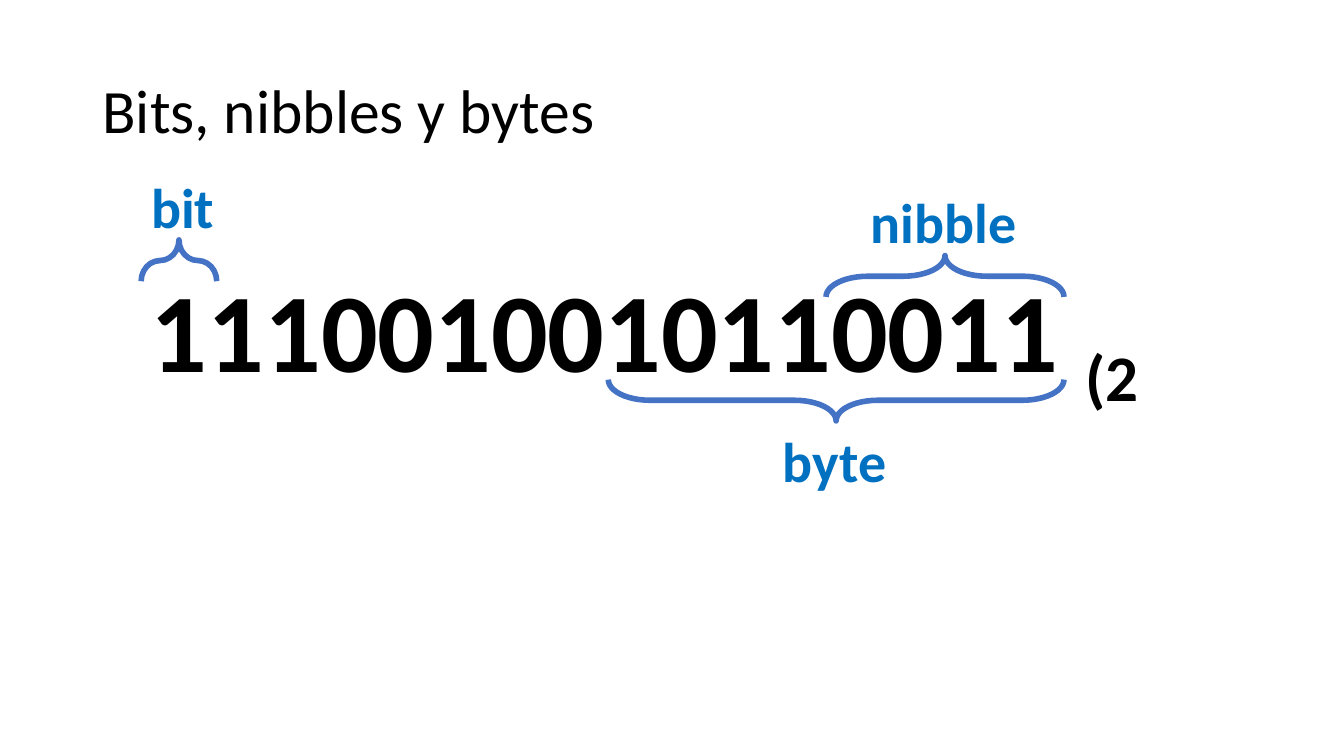
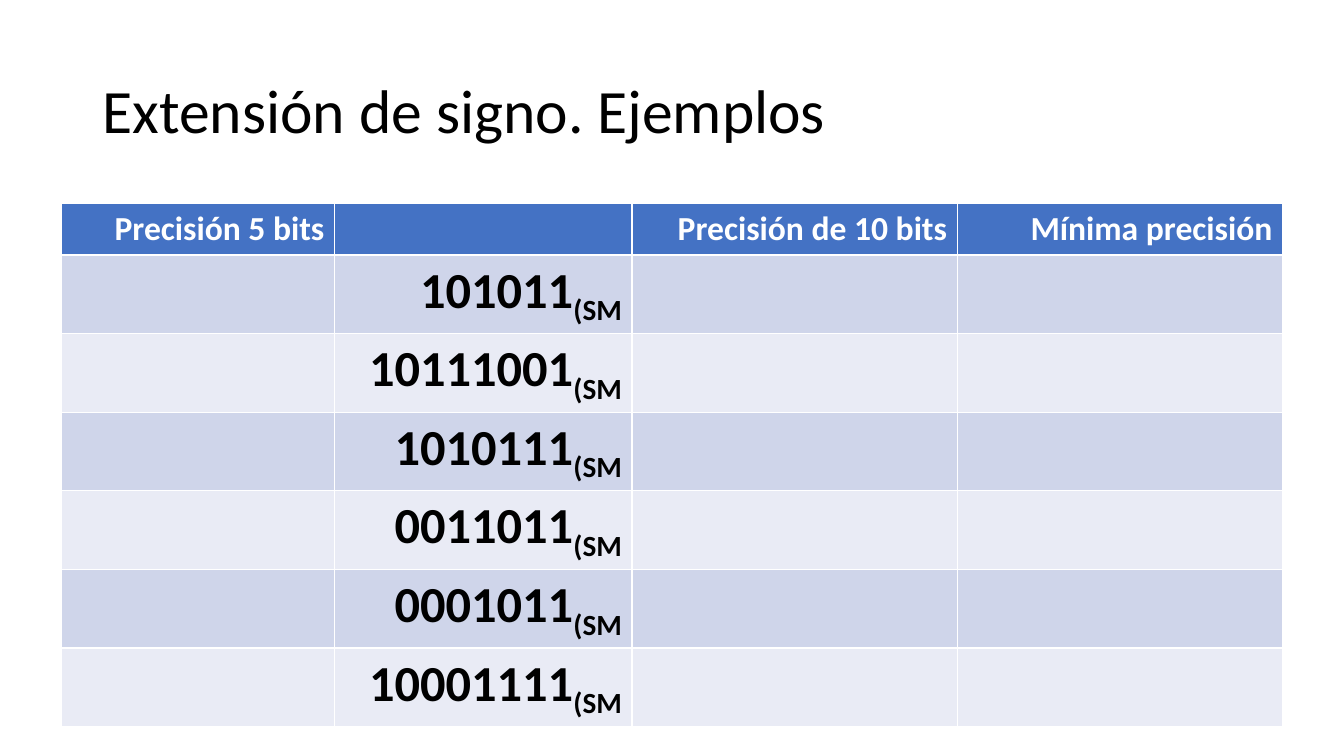
import pptx
import pptx.dml.color
import pptx.enum.shapes
import pptx.enum.text
import pptx.util

Pt = pptx.util.Pt
ALIGN = pptx.enum.text.PP_ALIGN
FIT = pptx.enum.text.MSO_AUTO_SIZE

COLORS = {
    "text": "000000",
    "white": "FFFFFF",
    "label": "0070C0",
    "accent": "4472C4",
    "dark_band": "CFD5EA",
    "light_band": "E9EBF5",
}


def rgb(name):
    return pptx.dml.color.RGBColor.from_string(COLORS[name])


def write(text_frame, text, size=40, color="text", bold=True, align=ALIGN.LEFT, subscript=""):
    paragraph = text_frame.paragraphs[0]
    paragraph.alignment = align
    for content in filter(None, (text, subscript)):
        run = paragraph.add_run()
        run.text = content
        run.font.name = "Calibri"
        run.font.size = Pt(size)
        run.font.bold = bold
        run.font.color.rgb = rgb(color)
    if subscript:
        run.font._element.set("baseline", "-25000")
    return paragraph


presentation = pptx.Presentation()
presentation.slide_width = Pt(960)
presentation.slide_height = Pt(540)

slides = []
for heading in ("Bits, nibbles y bytes", "Extensión de signo. Ejemplos"):
    slide = presentation.slides.add_slide(presentation.slide_layouts[5])
    title = slide.shapes.title
    title.left, title.top, title.width, title.height = Pt(66), Pt(28.75), Pt(828), Pt(104.4)
    title.text_frame.auto_size = FIT.NONE
    title.text_frame.vertical_anchor = pptx.enum.text.MSO_ANCHOR.MIDDLE
    write(title.text_frame, heading, size=44, bold=False).line_spacing = 0.9
    slides.append(slide)
units_slide, table_slide = slides

text_boxes = [
    ("1110010010110011 ", "(2", 80, "text", False, (100.8, 182.9, 731.5, 104.4)),
    ("nibble", "", 40, "label", False, (614.9, 130.3, 120.2, 55.4)),
    ("bit", "", 40, "label", True, (100.8, 119.5, 195.8, 55.4)),
    ("byte", "", 40, "label", False, (552.2, 301, 89.3, 55.4)),
]
for text, subscript, size, color, wrap, box in text_boxes:
    text_frame = units_slide.shapes.add_textbox(*map(Pt, box)).text_frame
    text_frame.word_wrap = wrap
    text_frame.auto_size = FIT.SHAPE_TO_FIT_TEXT
    write(text_frame, text, size=size, color=color, subscript=subscript)

brace_depth = 29.5
for start, end, middle, rotation in (
    (590, 760, 197.3, 90),
    (100.8, 154.8, 186.1, 90),
    (434.5, 760, 285.9, 270),
):
    length = end - start
    brace = units_slide.shapes.add_shape(
        pptx.enum.shapes.MSO_SHAPE.LEFT_BRACE,
        Pt((start + end - brace_depth) / 2),
        Pt(middle - length / 2),
        Pt(brace_depth),
        Pt(length),
    )
    brace.rotation = rotation
    brace.adjustments[0] = 1.01
    brace.shadow.inherit = False
    brace.fill.background()
    brace.line.color.rgb = rgb("accent")
    brace.line.width = Pt(4)

headers = ["Precisión 5 bits", "", "Precisión de 10 bits", "Mínima precisión"]
numbers = ["101011", "10111001", "1010111", "0011011", "0001011", "10001111"]
column_widths = [195, 212.4, 232.4, 232.4]
table = table_slide.shapes.add_table(
    len(numbers) + 1, len(headers), Pt(44), Pt(145.6), Pt(sum(column_widths)), Pt(372.5)
).table
for column, width in zip(table.columns, column_widths):
    column.width = Pt(width)
for row_index, row in enumerate(table.rows):
    row.height = Pt(56 if row_index else 36.5)
    band = ("light_band", "dark_band")[row_index % 2] if row_index else "accent"
    for cell in row.cells:
        cell.fill.solid()
        cell.fill.fore_color.rgb = rgb(band)
for cell, header in zip(table.rows[0].cells, headers):
    write(cell.text_frame, header, size=24, color="white", align=ALIGN.RIGHT)
for row_index, number in enumerate(numbers, 1):
    cell = table.cell(row_index, 1)
    write(cell.text_frame, number, size=36, align=ALIGN.RIGHT, subscript="(SM")

presentation.save("out.pptx")
